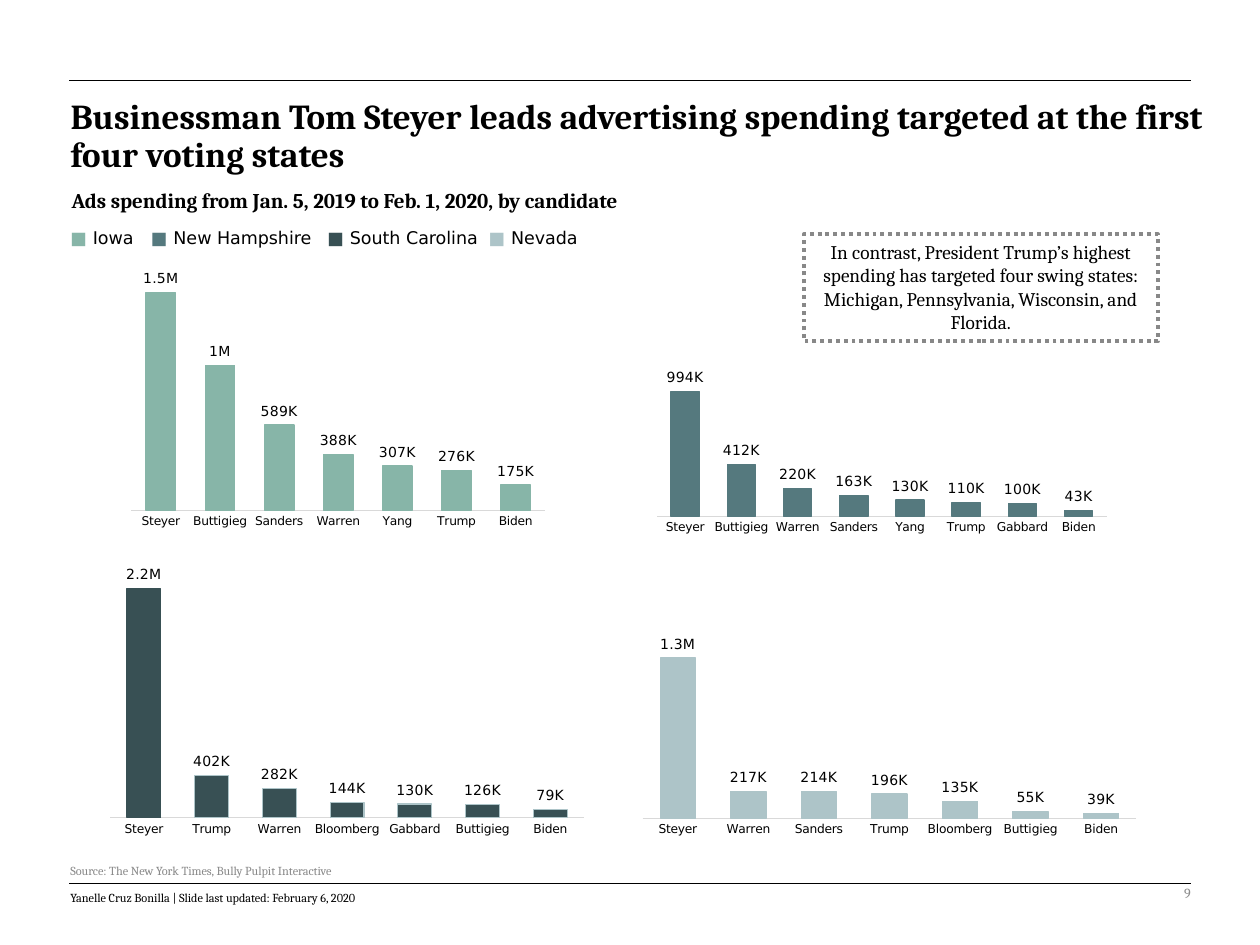
"""Build a slide comparing campaign ad spending in the first four voting states."""
from dataclasses import dataclass
from typing import NamedTuple

from lxml import etree
from pptx import Presentation
from pptx.chart.data import CategoryChartData
from pptx.dml.color import RGBColor
from pptx.enum.chart import XL_CHART_TYPE, XL_LABEL_POSITION, XL_TICK_MARK
from pptx.enum.dml import MSO_LINE
from pptx.enum.shapes import MSO_CONNECTOR, MSO_SHAPE
from pptx.enum.text import MSO_ANCHOR, PP_ALIGN
from pptx.oxml.ns import qn
from pptx.util import Inches, Pt

COLUMN = XL_CHART_TYPE.COLUMN_CLUSTERED
OUTSIDE_END = XL_LABEL_POSITION.OUTSIDE_END
NO_TICK = XL_TICK_MARK.NONE
DOTTED = MSO_LINE.ROUND_DOT
STRAIGHT = MSO_CONNECTOR.STRAIGHT
RECTANGLE = MSO_SHAPE.RECTANGLE
TOP, MIDDLE = MSO_ANCHOR.TOP, MSO_ANCHOR.MIDDLE
LEFT, CENTER, RIGHT = PP_ALIGN.LEFT, PP_ALIGN.CENTER, PP_ALIGN.RIGHT


@dataclass(frozen=True)
class Theme:
    serif: str = "Cambria"
    sans: str = "DejaVu Sans"
    ink: str = "000000"
    gray: str = "888888"
    page_gray: str = "8C8C8C"
    axis: str = "D9D9D9"
    iowa: str = "87B5A8"
    new_hampshire: str = "55797E"
    south_carolina: str = "385054"
    nevada: str = "ADC4C8"
    title: float = 20
    subtitle: float = 12
    callout: float = 11
    legend: float = 10
    label: float = 8
    small: float = 7


THEME = Theme()


class Box(NamedTuple):
    left: float
    top: float
    width: float
    height: float

    def lengths(self) -> list:
        return [Inches(value) for value in self]


class Style(NamedTuple):
    size: float
    color: str = THEME.ink
    bold: bool = False
    family: str = THEME.serif


@dataclass(frozen=True)
class StateSpending:
    name: str
    color: str
    outline: str
    box: Box
    plot: Box
    axis_top: float
    spending: dict[str, float]


STATES = (
    StateSpending("Iowa", THEME.iowa, THEME.iowa,
                  Box(0.9, 2.15, 3.57, 2.21), Box(0.04, 0.02, 0.92, 0.84), 1600,
                  {"Steyer": 1500, "Buttigieg": 1000, "Sanders": 589, "Warren": 388,
                   "Yang": 307, "Trump": 276, "Biden": 175}),
    StateSpending("New Hampshire", THEME.new_hampshire, THEME.new_hampshire,
                  Box(5.06, 2.11, 3.88, 2.26), Box(0.04, 0.35, 0.92, 0.53), 1200,
                  {"Steyer": 994, "Buttigieg": 412, "Warren": 220, "Sanders": 163,
                   "Yang": 130, "Trump": 110, "Gabbard": 100, "Biden": 43}),
    StateSpending("South Carolina", THEME.south_carolina, THEME.nevada,
                  Box(0.71, 4.4, 4.09, 2.43), Box(0.04, 0.01, 0.92, 0.85), 2500,
                  {"Steyer": 2200, "Trump": 402, "Warren": 282, "Bloomberg": 144,
                   "Gabbard": 130, "Buttigieg": 126, "Biden": 79}),
    StateSpending("Nevada", THEME.nevada, THEME.nevada,
                  Box(4.93, 4.55, 4.26, 2.21), Box(0.04, 0.26, 0.92, 0.62), 1400,
                  {"Steyer": 1300, "Warren": 217, "Sanders": 214, "Trump": 196,
                   "Bloomberg": 135, "Buttigieg": 55, "Biden": 39}),
)
LEGEND_STOPS = (0.64, 2.04, 3.32)


def rgb(color: str) -> RGBColor:
    return RGBColor.from_string(color)


def apply_font(font, style: Style) -> None:
    font.name, font.size, font.bold = style.family, Pt(style.size), style.bold
    font.color.rgb = rgb(style.color)


def add_run(paragraph, text: str, style: Style) -> None:
    run = paragraph.add_run()
    run.text = text
    apply_font(run.font, style)


def fill_frame(shape, text: str, style: Style, align=LEFT, anchor=TOP):
    frame = shape.text_frame
    frame.word_wrap = True
    frame.vertical_anchor = anchor
    paragraph = frame.paragraphs[0]
    paragraph.alignment = align
    add_run(paragraph, text, style)
    return paragraph


def add_text(slide, box: Box, text: str, style: Style, align=LEFT, anchor=TOP) -> None:
    fill_frame(slide.shapes.add_textbox(*box.lengths()), text, style, align, anchor)


def add_rule(slide, y: float) -> None:
    rule = slide.shapes.add_connector(STRAIGHT, Inches(0.55), Inches(y), Inches(9.45), Inches(y))
    rule.line.color.rgb = rgb(THEME.ink)
    rule.line.width = Pt(0.5)
    etree.SubElement(rule.element.spPr, qn("a:effectLst"))


def add_legend(slide, box: Box) -> None:
    frame = slide.shapes.add_textbox(*box.lengths()).text_frame
    frame.word_wrap = True
    paragraph = frame.paragraphs[0]
    stops = etree.SubElement(paragraph._p.get_or_add_pPr(), qn("a:tabLst"))
    for position in LEGEND_STOPS:
        etree.SubElement(stops, qn("a:tab"), pos=str(Inches(position)), algn="l")
    for state in STATES:
        gap = "" if state is STATES[-1] else "\t"
        add_run(paragraph, "■ ", Style(THEME.legend, state.color, True, THEME.sans))
        add_run(paragraph, state.name + gap, Style(THEME.legend, family=THEME.sans))


def place_plot(chart, plot: Box) -> None:
    area = chart.element.find(".//" + qn("c:plotArea"))
    for previous in area.findall(qn("c:layout")):
        area.remove(previous)
    layout = etree.Element(qn("c:layout"))
    area.insert(0, layout)
    manual = etree.SubElement(layout, qn("c:manualLayout"))
    settings = {"layoutTarget": "inner", "xMode": "edge", "yMode": "edge",
                "x": plot.left, "y": plot.top, "w": plot.width, "h": plot.height}
    for tag, value in settings.items():
        etree.SubElement(manual, qn(f"c:{tag}"), val=str(value))


def spending_label(thousands: float) -> str:
    return f"{thousands / 1000:g}M" if thousands >= 1000 else f"{thousands}K"


def add_labels(series, amounts: list[float]) -> None:
    style = Style(THEME.label, family=THEME.sans)
    labels = series.data_labels
    labels.show_value = True
    labels.position = OUTSIDE_END
    apply_font(labels.font, style)
    for index, amount in enumerate(amounts):
        label = series.points[index].data_label
        add_run(label.text_frame.paragraphs[0], spending_label(amount), style)
        label.position = OUTSIDE_END


def add_state_chart(slide, state: StateSpending) -> None:
    amounts = list(state.spending.values())
    data = CategoryChartData()
    data.categories = list(state.spending)
    data.add_series("Series 1", amounts)
    chart = slide.shapes.add_chart(COLUMN, *state.box.lengths(), data).chart
    chart.has_title = chart.has_legend = False
    apply_font(chart.font, Style(THEME.legend))
    place_plot(chart, state.plot)

    candidates, scale = chart.category_axis, chart.value_axis
    candidates.major_tick_mark = candidates.minor_tick_mark = NO_TICK
    candidates.format.line.color.rgb = rgb(THEME.axis)
    candidates.format.line.width = Pt(0.75)
    apply_font(candidates.tick_labels.font, Style(THEME.small, family=THEME.sans))
    scale.has_major_gridlines = scale.visible = False
    scale.minimum_scale, scale.maximum_scale = 0, state.axis_top

    columns = chart.plots[0]
    columns.gap_width, columns.overlap = 100, -27
    columns.vary_by_categories = False
    series = columns.series[0]
    for part, outline in ((series, state.outline), (series.points[0], state.color)):
        part.format.fill.solid()
        part.format.fill.fore_color.rgb = rgb(state.color)
        part.format.line.color.rgb = rgb(outline)
        part.format.line.width = Pt(0.75)
    add_labels(series, amounts)


def add_callout(slide, box: Box, text: str) -> None:
    callout = slide.shapes.add_shape(RECTANGLE, *box.lengths())
    callout.shadow.inherit = False
    callout.fill.background()
    callout.line.color.rgb = rgb(THEME.gray)
    callout.line.width = Pt(2.25)
    callout.line.dash_style = DOTTED
    fill_frame(callout, text, Style(THEME.callout), CENTER)


def main() -> None:
    deck = Presentation()
    deck.slide_width, deck.slide_height = Inches(10), Inches(7.5)
    slide = deck.slides.add_slide(deck.slide_layouts[5])
    for y in (7.01, 0.64):
        add_rule(slide, y)
    title = slide.shapes.title
    title.left, title.top, title.width, title.height = Box(0.46, 0.74, 9.2, 0.7).lengths()
    heading = fill_frame(title, "Businessman Tom Steyer leads advertising spending targeted "
                         "at the first four voting states", Style(THEME.title, bold=True), anchor=MIDDLE)
    heading.line_spacing = 0.9
    add_text(slide, Box(0.47, 1.44, 7.57, 0.3),
             "Ads spending from Jan. 5, 2019 to Feb. 1, 2020, by candidate", Style(THEME.subtitle, bold=True))
    add_legend(slide, Box(0.46, 1.75, 4.44, 0.22))
    for state in STATES:
        add_state_chart(slide, state)
    add_callout(slide, Box(6.38, 1.86, 2.81, 0.85),
                "In contrast, President Trump’s highest spending has targeted four swing states: "
                "Michigan, Pennsylvania, Wisconsin, and Florida.")
    add_text(slide, Box(0.46, 6.8, 6.95, 0.22),
             "Source: The New York Times, Bully Pulpit Interactive", Style(THEME.small, THEME.gray))
    add_text(slide, Box(0.46, 7.02, 6.95, 0.22),
             "Yanelle Cruz Bonilla | Slide last updated: February 6, 2020", Style(THEME.small))
    add_text(slide, Box(7.06, 6.89, 2.49, 0.4), "9", Style(THEME.label, THEME.page_gray), RIGHT, MIDDLE)
    deck.save("out.pptx")


if __name__ == "__main__":
    main()
